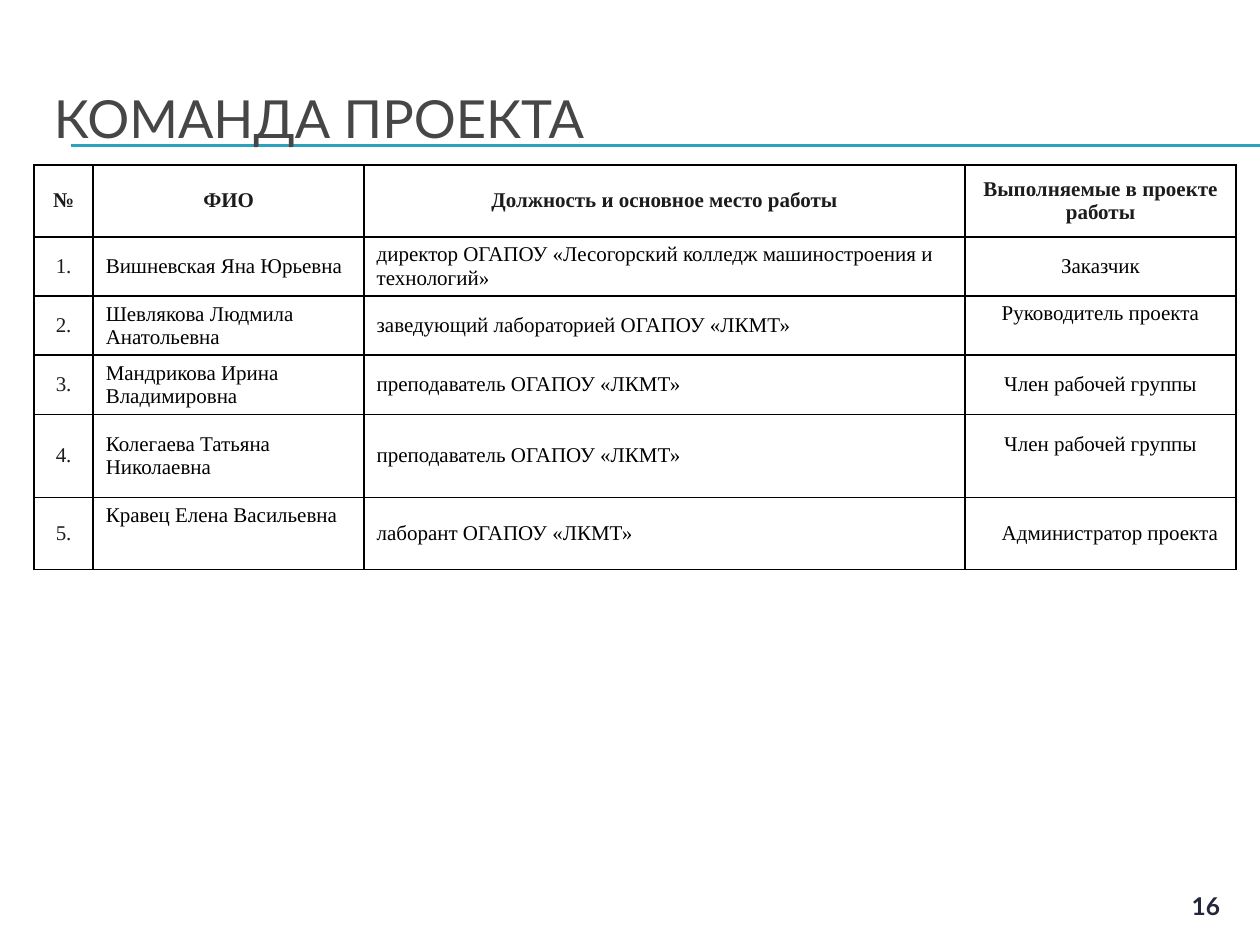
from dataclasses import dataclass
from lxml.etree import SubElement as Sub
from pptx import Presentation
from pptx.dml.color import RGBColor as Rgb
from pptx.enum.shapes import MSO_CONNECTOR as Link
from pptx.enum.text import MSO_ANCHOR as Anchor, PP_ALIGN as Align
from pptx.oxml.ns import qn
from pptx.util import Inches, Pt

TITLE = "КОМАНДА ПРОЕКТА"
PAGE = "16"
HEADS = ["№", "ФИО", "Должность и основное место работы", "Выполняемые в проекте работы"]
TEAM = [
    ("Вишневская Яна Юрьевна",
     "директор ОГАПОУ «Лесогорский колледж машиностроения и технологий»", "Заказчик"),
    ("Шевлякова Людмила Анатольевна", "заведующий лабораторией ОГАПОУ «ЛКМТ»",
     "Руководитель проекта"),
    ("Мандрикова Ирина Владимировна", "преподаватель ОГАПОУ «ЛКМТ»", "Член рабочей группы"),
    ("Колегаева Татьяна Николаевна", "преподаватель ОГАПОУ «ЛКМТ»", "Член рабочей группы"),
    ("Кравец Елена Васильевна", "лаборант ОГАПОУ «ЛКМТ»", "Администратор проекта"),
]
ROWS = [HEADS] + [(f"{n}.", *one) for n, one in enumerate(TEAM, 1)]
WIDTHS = [0.47, 2.15, 4.77, 2.15]
HEIGHTS = [0.57, 0.47, 0.47, 0.47, 0.66, 0.57]
LIFTS = {(2, 3): 0.19, (4, 3): 0.19, (5, 1): 0.28}
INDENTS = {(5, 3): 0.15}
CENTRED = (0, 3)


@dataclass
class Theme:
    sans: str = "Lato"
    serif: str = "Times New Roman"
    title: str = "464646"
    head: str = "1C1C1C"
    body: str = "000000"
    rule: str = "2DA2BF"
    page: str = "24263C"
    big: int = 30
    mid: int = 14
    small: int = 12


LOOK = Theme()


def style(frame, font, size, color, bold=False, align=Align.LEFT):
    para = frame.paragraphs[0]
    para.alignment = align
    face = para.runs[0].font
    face.name, face.size, face.bold = font, Pt(size), bold
    face.color.rgb = Rgb.from_string(color)


def add_text(slide, text, spot, *look):
    frame = slide.shapes.add_textbox(*map(Inches, spot)).text_frame
    frame.word_wrap = True
    frame.vertical_anchor = Anchor.MIDDLE
    frame.text = text
    style(frame, *look)


def add_rule(slide, y):
    line = slide.shapes.add_connector(
        Link.STRAIGHT, Inches(0.56), Inches(y), Inches(10), Inches(y))
    line.line.color.rgb = Rgb.from_string(LOOK.rule)
    line.line.width = Pt(0.75)
    Sub(line._element.spPr, qn("a:effectLst"))


def add_edges(cell):
    props = cell._tc.get_or_add_tcPr()
    for side in "LRTB":
        edge = Sub(props, qn(f"a:ln{side}"), w=str(Pt(1)))
        fill = Sub(edge, qn("a:solidFill"))
        Sub(fill, qn("a:srgbClr"), val=LOOK.body)


def fill_cell(cell, text, row, col):
    add_edges(cell)
    cell.fill.background()
    cell.vertical_anchor = Anchor.MIDDLE
    cell.margin_left = cell.margin_right = Inches(0.1)
    cell.margin_top = Inches(0.03)
    cell.margin_bottom = Inches(0.03 + LIFTS.get((row, col), 0))
    cell.text_frame.text = text
    head = row == 0
    color = LOOK.head if head or col == 0 else LOOK.body
    align = Align.CENTER if head or col in CENTRED else Align.LEFT
    style(cell.text_frame, LOOK.serif, LOOK.small, color, head, align)
    if (row, col) in INDENTS:
        props = cell.text_frame.paragraphs[0]._p.get_or_add_pPr()
        props.set("marL", str(Inches(INDENTS[row, col])))


def add_team(slide):
    spot = (0.27, 1.31, sum(WIDTHS), sum(HEIGHTS))
    table = slide.shapes.add_table(len(ROWS), len(WIDTHS), *map(Inches, spot)).table
    table.first_row = table.horz_banding = False
    for col, width in zip(table.columns, WIDTHS):
        col.width = Inches(width)
    for row, height in zip(table.rows, HEIGHTS):
        row.height = Inches(height)
    for r, texts in enumerate(ROWS):
        for c, text in enumerate(texts):
            fill_cell(table.cell(r, c), text, r, c)


def main():
    deck = Presentation()
    deck.slide_width, deck.slide_height = Inches(10), Inches(7.5)
    slide = deck.slides.add_slide(deck.slide_layouts[6])
    for y in (1.15, 1.16):
        add_rule(slide, y)
    add_text(slide, TITLE, (0.33, 0.47, 9.5, 0.92), LOOK.sans, LOOK.big, LOOK.title)
    add_team(slide)
    add_text(slide, PAGE, (9.3, 7.03, 0.54, 0.31),
             LOOK.sans, LOOK.mid, LOOK.page, True, Align.CENTER)
    deck.save("out.pptx")


if __name__ == "__main__":
    main()
